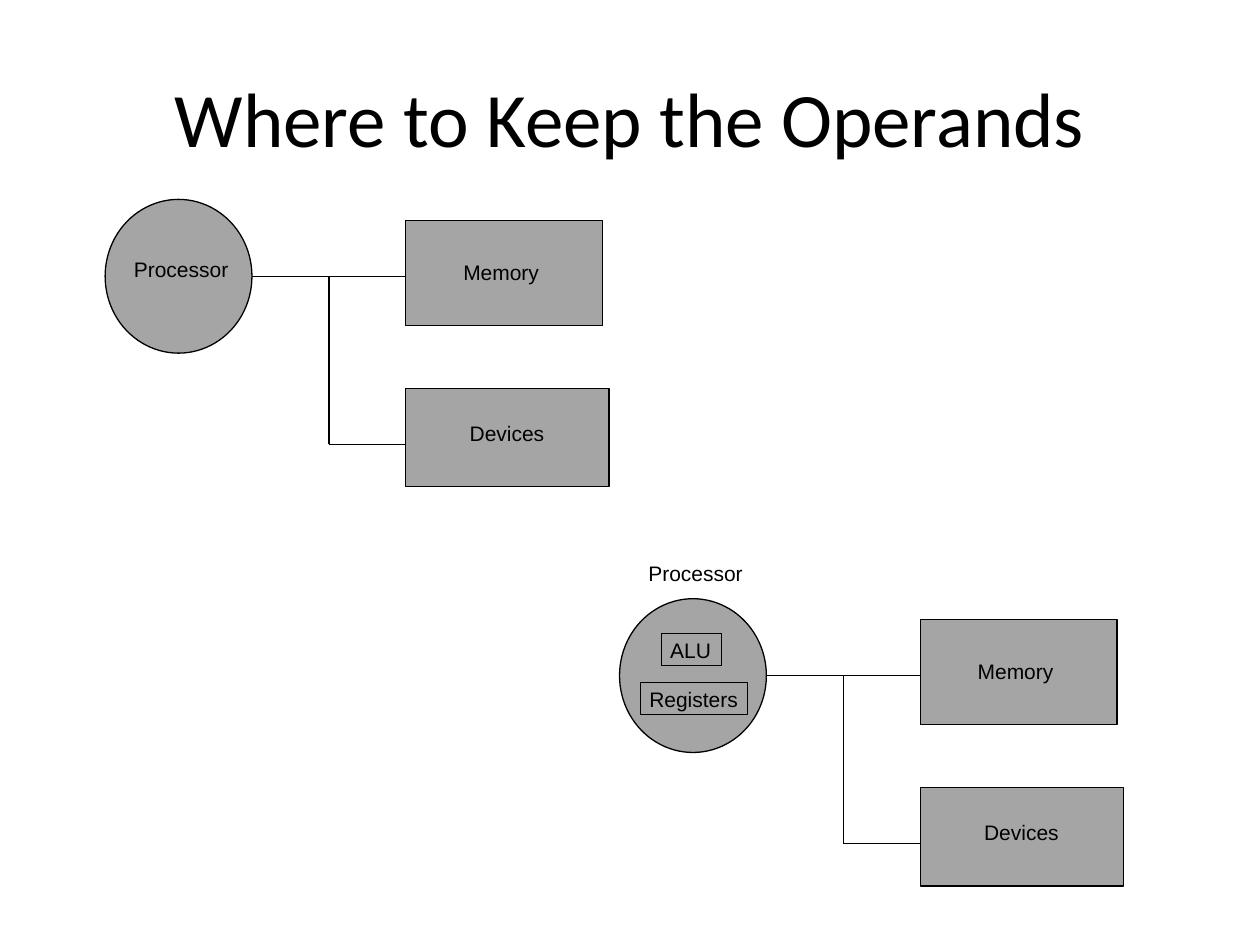
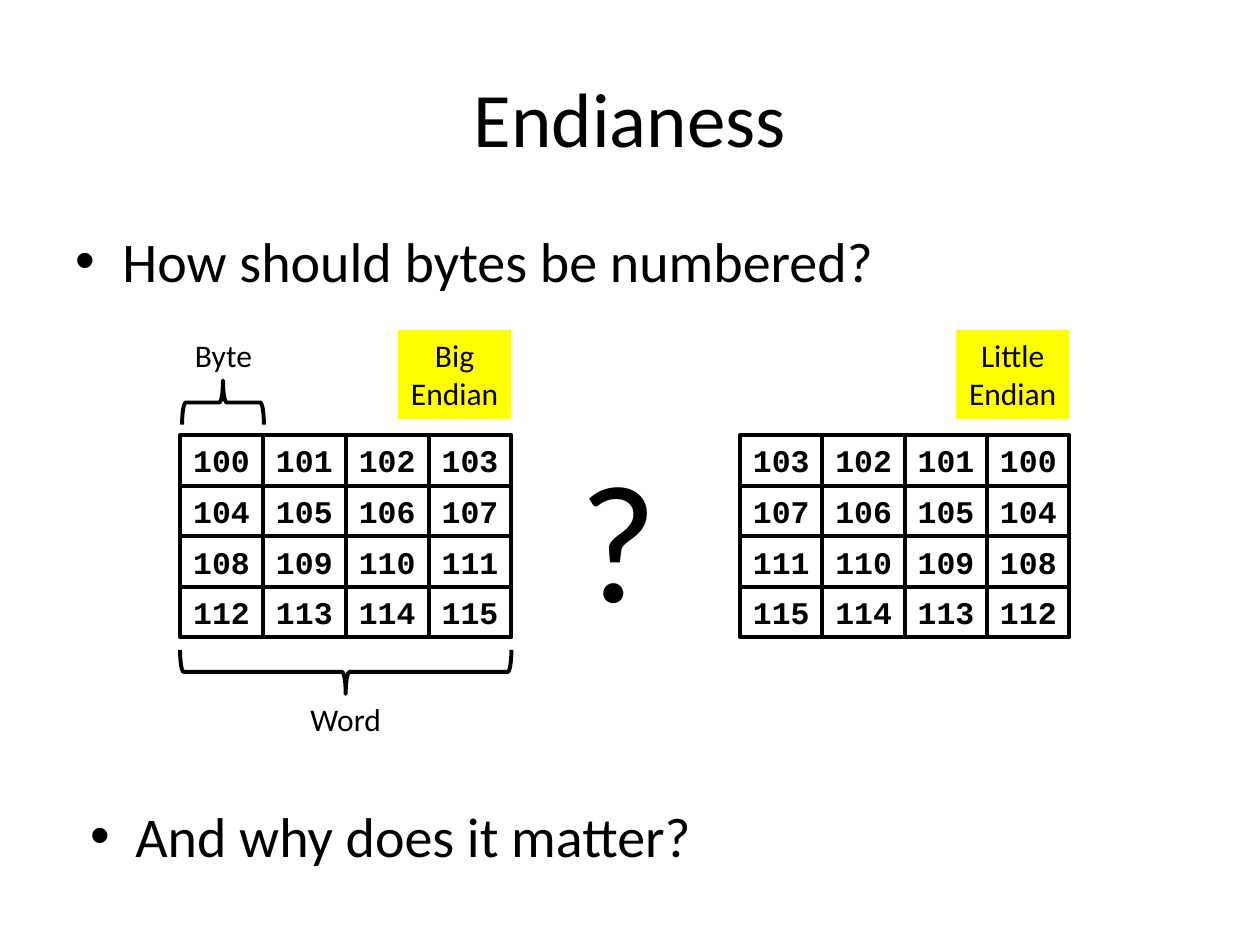
import pptx
import pptx.dml.color
import pptx.enum.shapes
import pptx.enum.text
import pptx.oxml
import pptx.oxml.ns
import pptx.util

Cm = pptx.util.Cm
Pt = pptx.util.Pt
SHAPE = pptx.enum.shapes.MSO_SHAPE
ALIGN = pptx.enum.text.PP_ALIGN
ANCHOR = pptx.enum.text.MSO_ANCHOR

BLACK = pptx.dml.color.RGBColor(0x00, 0x00, 0x00)
GRAY = pptx.dml.color.RGBColor(0xA5, 0xA5, 0xA5)
YELLOW = pptx.dml.color.RGBColor(0xFF, 0xFF, 0x00)
BODY_FONT = "Calibri"
DIAGRAM_FONT = "Arial"
BYTE_FONT = "Courier New"

CELL_HEIGHT = 1.02
GRID_SIDE = 4
FIRST_BYTE = 100
TAG_WIDTH = 2.29


def write(box, lines, size, font=BODY_FONT, bold=False, align=ALIGN.LEFT,
          insets=(0.25, 0.13), anchor=ANCHOR.TOP, wrap=False):
    frame = box.text_frame
    frame.word_wrap = wrap
    frame.vertical_anchor = anchor
    frame.margin_left = frame.margin_right = Cm(insets[0])
    frame.margin_top = frame.margin_bottom = Cm(insets[1])
    for number, line in enumerate(lines):
        para = frame.add_paragraph() if number else frame.paragraphs[0]
        para.alignment = align
        span = para.add_run()
        span.text = line
        span.font.size = Pt(size)
        span.font.name = font
        span.font.bold = bold
        span.font.color.rgb = BLACK


def add_label(shapes, left, top, width, height, text, size, **style):
    box = shapes.add_textbox(Cm(left), Cm(top), Cm(width), Cm(height))
    write(box, [text], size, **style)
    return box


def add_figure(shapes, kind, left, top, width, height, fill=None, line=None):
    box = shapes.add_shape(kind, Cm(left), Cm(top), Cm(width), Cm(height))
    box.shadow.inherit = False
    if fill is None:
        box.fill.background()
    else:
        box.fill.solid()
        box.fill.fore_color.rgb = fill
    if line is None:
        box.line.fill.background()
    else:
        box.line.color.rgb = BLACK
        box.line.width = Pt(line)
    return box


def add_wire(shapes, start_x, start_y, end_x, end_y):
    wire = shapes.add_connector(
        pptx.enum.shapes.MSO_CONNECTOR.STRAIGHT,
        Cm(start_x), Cm(start_y), Cm(end_x), Cm(end_y))
    wire.line.color.rgb = BLACK
    wire.line.width = Pt(0.75)
    properties = wire.element.spPr
    properties.append(pptx.oxml.parse_xml(
        f'<a:effectLst {pptx.oxml.ns.nsdecls("a")}/>'))


def add_bullet(page, left, top, width, height, text, indent):
    box = add_label(page.shapes, left, top, width, height, text, 32, wrap=True)
    properties = box.text_frame.paragraphs[0]._p.get_or_add_pPr()
    properties.set("marL", str(Cm(indent)))
    properties.set("indent", str(-Cm(indent)))
    namespace = pptx.oxml.ns.nsdecls("a")
    for tag in ('buFont {} typeface="Arial"', 'buChar {} char="•"'):
        properties.append(pptx.oxml.parse_xml(
            f"<a:{tag.format(namespace)}/>"))


def add_page(deck, title):
    page = deck.slides.add_slide(deck.slide_layouts[5])
    box = page.shapes.title
    box.left, box.top = Cm(1.27), Cm(0.76)
    box.width, box.height = Cm(22.86), Cm(3.18)
    write(box, [title], 44, align=ALIGN.CENTER, anchor=ANCHOR.MIDDLE,
          wrap=True)
    return page


def add_machine(page, left, top, processor_top, units=()):
    shapes = page.shapes.add_group_shape().shapes
    small = dict(size=12, font=DIAGRAM_FONT, insets=(0.18, 0.08))
    for kind, x, y, width, height in (
            (SHAPE.OVAL, 0, 0, 2.96, 3.1),
            (SHAPE.RECTANGLE, 6.06, 0.42, 3.97, 2.12),
            (SHAPE.RECTANGLE, 6.06, 3.81, 4.1, 1.98)):
        add_figure(shapes, kind, left + x, top + y, width, height, GRAY, 0.75)
    for text, x, y, width in (
            ("Processor", 0.4, processor_top, 2.4),
            ("Memory", 7.04, 1.13, 2.1),
            ("Devices", 7.17, 4.38, 2)):
        add_label(shapes, left + x, top + y, width, 0.66, text, **small)
    bus, branch, device = 1.55, 4.51, 4.94
    for start_x, start_y, end_x, end_y in (
            (2.96, bus, 6.06, bus),
            (branch, bus, branch, device),
            (branch, device, 6.06, device)):
        add_wire(shapes, left + start_x, top + start_y,
                 left + end_x, top + end_y)
    for text, x, y, width in units:
        unit = add_figure(shapes, SHAPE.RECTANGLE, left + x, top + y,
                          width, 0.65, line=0.75)
        write(unit, [text], **small)


def add_byte_grid(page, left, top, cell_width, order, reverse=False):
    for row in range(GRID_SIDE):
        for column in range(GRID_SIDE):
            place = GRID_SIDE - 1 - column if reverse else column
            cell = add_figure(
                page.shapes, SHAPE.RECTANGLE, left + column * cell_width,
                top + row * CELL_HEIGHT, cell_width, CELL_HEIGHT, line=2.25)
            write(cell, [str(FIRST_BYTE + row * GRID_SIDE + place)], 18,
                  font=BYTE_FONT, bold=True, align=ALIGN.CENTER)
    tag = add_figure(page.shapes, SHAPE.RECTANGLE,
                     left + GRID_SIDE * cell_width - TAG_WIDTH, top - 2.12,
                     TAG_WIDTH, 1.8, YELLOW)
    write(tag, [order, "Endian"], 18, align=ALIGN.CENTER)


def add_brace(page, left, top, width, height, rotation):
    shift = (width - height) / 2
    brace = add_figure(page.shapes, SHAPE.LEFT_BRACE, left + shift,
                       top - shift, height, width, line=2.25)
    brace.rotation = rotation


def add_grid_notes(page, left, top, grid_width):
    add_brace(page, left + 0.04, top - 1.1, 1.65, 0.89, 90)
    add_brace(page, left, top + 4.33, grid_width, 0.89, 270)
    add_label(page.shapes, left + 0.05, top - 2.12, 1.68, 1.02, "Byte", 18)
    add_label(page.shapes, left + 2.38, top + 5.22, 1.96, 1.02, "Word", 18)


def build_operands(deck):
    page = add_page(deck, "Where to Keep the Operands")
    add_machine(page, 2.12, 4.02, processor_top=1.07)
    add_machine(page, 12.49, 12.07, processor_top=-0.84,
                units=(("ALU", 0.84, 0.7, 1.22),
                       ("Registers", 0.42, 1.69, 2.16)))


def build_endianess(deck):
    page = add_page(deck, "Endianess")
    add_bullet(page, 1.27, 4.43, 22.86, 1.7,
               "How should bytes be numbered?", 0.95)
    grid_left, grid_top, cell_width = 3.63, 8.77, 1.67
    add_byte_grid(page, grid_left, grid_top, cell_width, "Big")
    add_byte_grid(page, 14.92, grid_top, 1.66, "Little", reverse=True)
    add_grid_notes(page, grid_left, grid_top, GRID_SIDE * cell_width)
    add_label(page.shapes, 11.43, 8.63, 2.11, 4.37, "?", 96)
    add_bullet(page, 1.57, 16.03, 12.78, 1.63, "And why does it matter?", 0.91)


def main():
    deck = pptx.Presentation()
    deck.slide_width, deck.slide_height = Cm(25.4), Cm(19.05)
    build_operands(deck)
    build_endianess(deck)
    deck.save("out.pptx")


if __name__ == "__main__":
    main()
